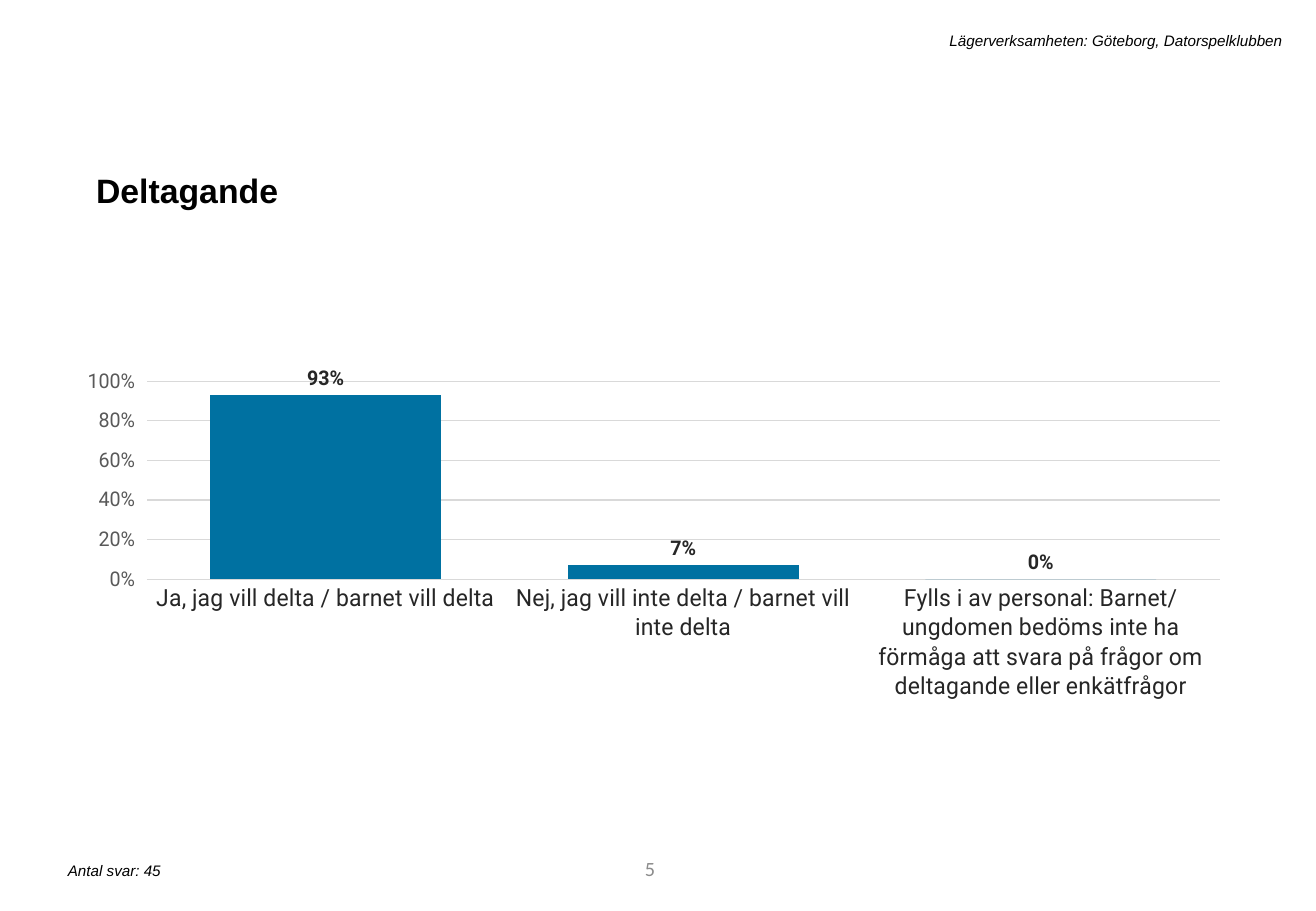
from lxml import etree
from pptx import Presentation
from pptx.chart.data import CategoryChartData
from pptx.dml.color import RGBColor
from pptx.enum.chart import XL_CHART_TYPE, XL_LABEL_POSITION, XL_TICK_MARK
from pptx.enum.text import MSO_ANCHOR, MSO_AUTO_SIZE, PP_ALIGN
from pptx.oxml.ns import qn
from pptx.util import Inches, Pt

PAGE_WIDTH, PAGE_HEIGHT = 10.83, 7.5
BLACK, DARK, GREY, PALE, BLUE = "000000", "262626", "595959", "D9D9D9", "0071A1"
ANSWERS = {
    "Ja, jag vill delta / barnet vill delta": 0.93,
    "Nej, jag vill inte delta / barnet vill inte delta": 0.07,
    "Fylls i av personal: Barnet/ungdomen bedöms inte ha förmåga att svara "
    "på frågor om deltagande eller enkätfrågor": 0,
}
# Inner plot area as shares of the chart
PLOT_AREA = {"x": 0.025, "y": 0.154, "w": 0.966, "h": 0.413}


def paint(color_format, color):
    color_format.rgb = RGBColor.from_string(color)


def set_font(font, name, size, color, bold=False, italic=False):
    font.name, font.size = name, Pt(size)
    font.bold, font.italic = bold, italic
    paint(font.color, color)


def set_line(line, color):
    line.width = Pt(0.75)
    paint(line.color, color)


def add_label(page, box, text, font_name, size, color,
              align=PP_ALIGN.LEFT, italic=False):
    """One-line text in a box given as left, top, width, height."""
    frame = page.shapes.add_textbox(*map(Inches, box)).text_frame
    frame.word_wrap = True
    frame.vertical_anchor = MSO_ANCHOR.MIDDLE
    para = frame.paragraphs[0]
    para.text, para.alignment = text, align
    set_font(para.font, font_name, size, color, italic=italic)


def add_title(page, box, text):
    title = page.shapes.title
    title.left, title.top, title.width, title.height = map(Inches, box)
    frame = title.text_frame
    frame.word_wrap = True
    frame.auto_size = MSO_AUTO_SIZE.NONE
    frame.vertical_anchor = MSO_ANCHOR.TOP
    para = frame.paragraphs[0]
    para.text, para.alignment = text, PP_ALIGN.LEFT
    para.line_spacing, para.space_before = 1.2, Pt(10)
    set_font(para.font, "Arial", 20, BLACK, bold=True)


def place_plot(chart):
    """Fix the inner plot area, which needs a manual layout in XML."""
    plot_area = chart.plots[0]._element.getparent()
    for old in plot_area.findall(qn("c:layout")):
        plot_area.remove(old)
    layout = etree.Element(qn("c:layout"))
    manual = etree.SubElement(layout, qn("c:manualLayout"))
    settings = {"layoutTarget": "inner", "xMode": "edge", "yMode": "edge", **PLOT_AREA}
    for tag, value in settings.items():
        etree.SubElement(manual, qn(f"c:{tag}")).set("val", str(value))
    plot_area.insert(0, layout)


def add_answer_chart(page, box):
    data = CategoryChartData(number_format="0%")
    data.categories = list(ANSWERS)
    data.add_series("Series 1", list(ANSWERS.values()))
    chart = page.shapes.add_chart(
        XL_CHART_TYPE.COLUMN_CLUSTERED, *map(Inches, box), data).chart
    chart.has_legend = chart.has_title = False
    set_font(chart.font, "Roboto", 10, BLACK)
    place_plot(chart)

    # Columns and their labels
    plot = chart.plots[0]
    plot.gap_width, plot.vary_by_categories = 55, False
    fill = plot.series[0].format.fill
    fill.solid()
    paint(fill.fore_color, BLUE)
    labels = plot.series[0].data_labels
    labels.show_value = True
    labels.position = XL_LABEL_POSITION.OUTSIDE_END
    labels.number_format, labels.number_format_is_linked = "0%", False
    set_font(labels.font, "Roboto", 12, DARK, bold=True)

    # Axes
    answers, shares = chart.category_axis, chart.value_axis
    answers.major_tick_mark = XL_TICK_MARK.NONE
    set_line(answers.format.line, PALE)
    set_font(answers.tick_labels.font, "Roboto", 14, DARK)
    shares.minimum_scale, shares.maximum_scale, shares.major_unit = 0, 1, 0.2
    shares.major_tick_mark = XL_TICK_MARK.OUTSIDE
    shares.format.line.fill.background()
    set_line(shares.major_gridlines.format.line, PALE)
    shares.tick_labels.number_format = "0%"
    shares.tick_labels.number_format_is_linked = False
    set_font(shares.tick_labels.font, "Roboto", 12, GREY)


def main():
    deck = Presentation()
    deck.slide_width, deck.slide_height = Inches(PAGE_WIDTH), Inches(PAGE_HEIGHT)
    page = deck.slides.add_slide(deck.slide_layouts[5])

    # Header and title
    add_label(page, (1.79, 0.21, 8.86, 0.25),
              "Lägerverksamheten: Göteborg, Datorspelklubben",
              "Arial", 9, BLACK, PP_ALIGN.RIGHT, italic=True)
    add_title(page, (0.69, 1.28, 9.4, 0.48), "Deltagande")

    # Chart
    add_answer_chart(page, (0.72, 2.53, 9.4, 3.95))

    # Footer
    add_label(page, (0.46, 7.04, 4.41, 0.25), "Antal svar: 45",
              "Arial", 9, BLACK, italic=True)
    add_label(page, (3.05, 6.95, 2.44, 0.4), "5",
              "Calibri", 12, "8C8C8C", PP_ALIGN.RIGHT)
    deck.save("out.pptx")


if __name__ == "__main__":
    main()
